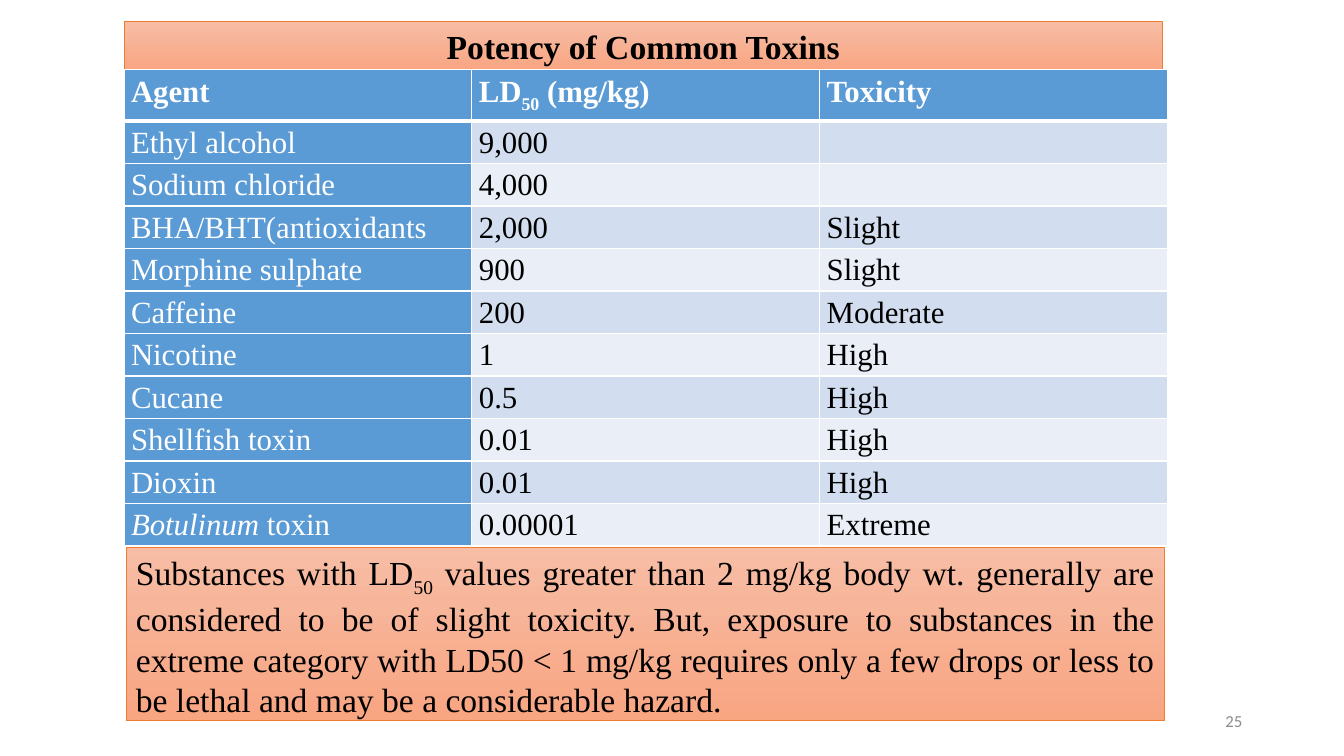
from pptx import Presentation
from pptx.dml.color import RGBColor
from pptx.enum.shapes import MSO_SHAPE
from pptx.enum.text import MSO_ANCHOR, MSO_AUTO_SIZE, PP_ALIGN
from pptx.oxml.ns import qn
from pptx.util import Inches, Pt
from lxml import etree

RECTANGLE = MSO_SHAPE.RECTANGLE
TOP, MIDDLE = MSO_ANCHOR.TOP, MSO_ANCHOR.MIDDLE
GROW = MSO_AUTO_SIZE.SHAPE_TO_FIT_TEXT
LEFT, CENTER, RIGHT, JUSTIFY = PP_ALIGN.LEFT, PP_ALIGN.CENTER, PP_ALIGN.RIGHT, PP_ALIGN.JUSTIFY

COLORS = {
    "black": "000000",
    "white": "FFFFFF",
    "gray": "8C8C8C",
    "orange": "ED7D31",
    "peach_light": "F7BDA5",
    "peach_dark": "F8A582",
    "blue": "5B9BD5",
    "band_dark": "D2DEEF",
    "band_light": "EAEFF7",
}

COLUMN_WIDTH = 3.45
HEADER_HEIGHT = 0.51
ROW_HEIGHT = 0.42

# A cell is a list of (text, style) runs; style is "", "italic" or "subscript".
HEADER = [[("Agent", "")], [("LD", ""), ("50", "subscript"), (" (mg/kg)", "")], [("Toxicity", "")]]
TOXINS = [
    ("Ethyl alcohol", "9,000", ""),
    ("Sodium chloride", "4,000", ""),
    ("BHA/BHT(antioxidants", "2,000", "Slight"),
    ("Morphine sulphate", "900", "Slight"),
    ("Caffeine", "200", "Moderate"),
    ("Nicotine", "1", "High"),
    ("Cucane", "0.5", "High"),
    ("Shellfish toxin", "0.01", "High"),
    ("Dioxin", "0.01", "High"),
]
BOTULINUM = [[("Botulinum", "italic"), (" toxin", "")], [("0.00001", "")], [("Extreme", "")]]
NOTE = [
    ("Substances with LD", ""),
    ("50", "subscript"),
    (" values greater than 2 mg/kg body wt. generally are considered to be of slight toxicity. "
     "But, exposure to substances in the extreme category with LD50 < 1 mg/kg requires only "
     "a few drops or less to be lethal and may be a considerable hazard.", ""),
]


def rgb(name):
    return RGBColor.from_string(COLORS[name])


class SlideBuilder:
    def __init__(self, slide, font="Times New Roman"):
        self.slide = slide
        self.font = font

    def add_runs(self, paragraph, runs, size, color="black", bold=False, align=LEFT, font=None):
        paragraph.alignment = align
        for text, style in runs:
            run = paragraph.add_run()
            run.text = text
            run.font.name = font or self.font
            run.font.size = Pt(size)
            run.font.bold = bold
            run.font.italic = style == "italic"
            run.font.color.rgb = rgb(color)
            if style == "subscript":
                run.font._element.set("baseline", "-25000")

    def panel(self, left, top, width, height, runs, **style):
        """Add a peach gradient box with text."""
        shape = self.slide.shapes.add_shape(
            RECTANGLE, Inches(left), Inches(top), Inches(width), Inches(height))
        shape.shadow.inherit = False
        shape.fill.gradient()
        shape.fill.gradient_angle = 270
        for stop, color in zip(shape.fill.gradient_stops, ("peach_light", "peach_dark")):
            stop.color.rgb = rgb(color)
        shape.line.color.rgb = rgb("orange")
        shape.line.width = Pt(0.5)
        frame = shape.text_frame
        frame.word_wrap = True
        frame.auto_size = GROW
        frame.vertical_anchor = TOP
        self.add_runs(frame.paragraphs[0], runs, 24, **style)

    def text(self, left, top, width, height, runs, size, **style):
        box = self.slide.shapes.add_textbox(
            Inches(left), Inches(top), Inches(width), Inches(height))
        box.text_frame.word_wrap = True
        box.text_frame.vertical_anchor = MIDDLE
        self.add_runs(box.text_frame.paragraphs[0], runs, size, **style)

    def cell_borders(self, cell, widths):
        properties = cell._tc.get_or_add_tcPr()
        for side, width in zip("LRTB", widths):
            line = etree.SubElement(properties, qn(f"a:ln{side}"), w=str(Pt(width)))
            fill = etree.SubElement(line, qn("a:solidFill"))
            etree.SubElement(fill, qn("a:srgbClr"), val=COLORS["white"])

    def table(self, left, top, rows):
        column_count = len(rows[0])
        height = HEADER_HEIGHT + ROW_HEIGHT * (len(rows) - 1)
        table = self.slide.shapes.add_table(
            len(rows), column_count, Inches(left), Inches(top),
            Inches(COLUMN_WIDTH * column_count), Inches(height)).table
        for row_index, row in enumerate(rows):
            is_header = row_index == 0
            table.rows[row_index].height = Inches(HEADER_HEIGHT if is_header else ROW_HEIGHT)
            band = "band_dark" if row_index % 2 else "band_light"
            for column_index, runs in enumerate(row):
                is_blue = is_header or column_index == 0
                cell = table.cell(row_index, column_index)
                cell.margin_left = cell.margin_right = Inches(0.07)
                cell.margin_top = cell.margin_bottom = 0
                self.cell_borders(cell, (1, 1, 3 if row_index == 1 else 1, 3 if is_header else 1))
                cell.fill.solid()
                cell.fill.fore_color.rgb = rgb("blue" if is_blue else band)
                paragraph = cell.text_frame.paragraphs[0]
                paragraph.line_spacing = 1.15
                self.add_runs(paragraph, runs, 22, "white" if is_blue else "black", bold=is_header)


def main():
    presentation = Presentation()
    presentation.slide_width = Inches(13.33)
    presentation.slide_height = Inches(7.5)
    builder = SlideBuilder(presentation.slides.add_slide(presentation.slide_layouts[6]))

    builder.panel(1.23, 0.21, 10.3, 0.5, [("Potency of Common Toxins", "")], bold=True, align=CENTER)
    toxin_rows = [[[(text, "")] if text else [] for text in row] for row in TOXINS]
    builder.table(1.23, 0.69, [HEADER, *toxin_rows, BOTULINUM])
    builder.text(9.42, 6.95, 3, 0.4, [("25", "")], 12, color="gray", align=RIGHT, font="Calibri")
    builder.panel(1.25, 5.43, 10.3, 1.72, NOTE, align=JUSTIFY)

    presentation.save("out.pptx")


if __name__ == "__main__":
    main()
